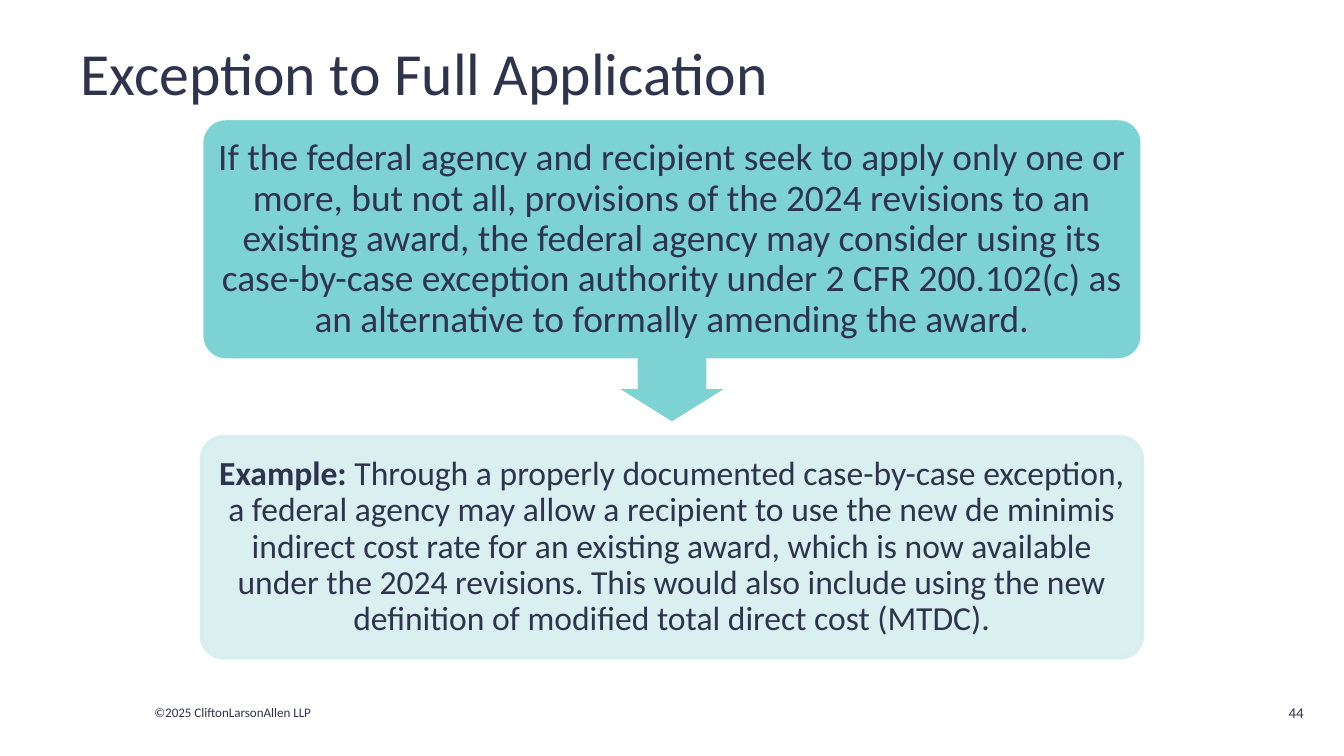
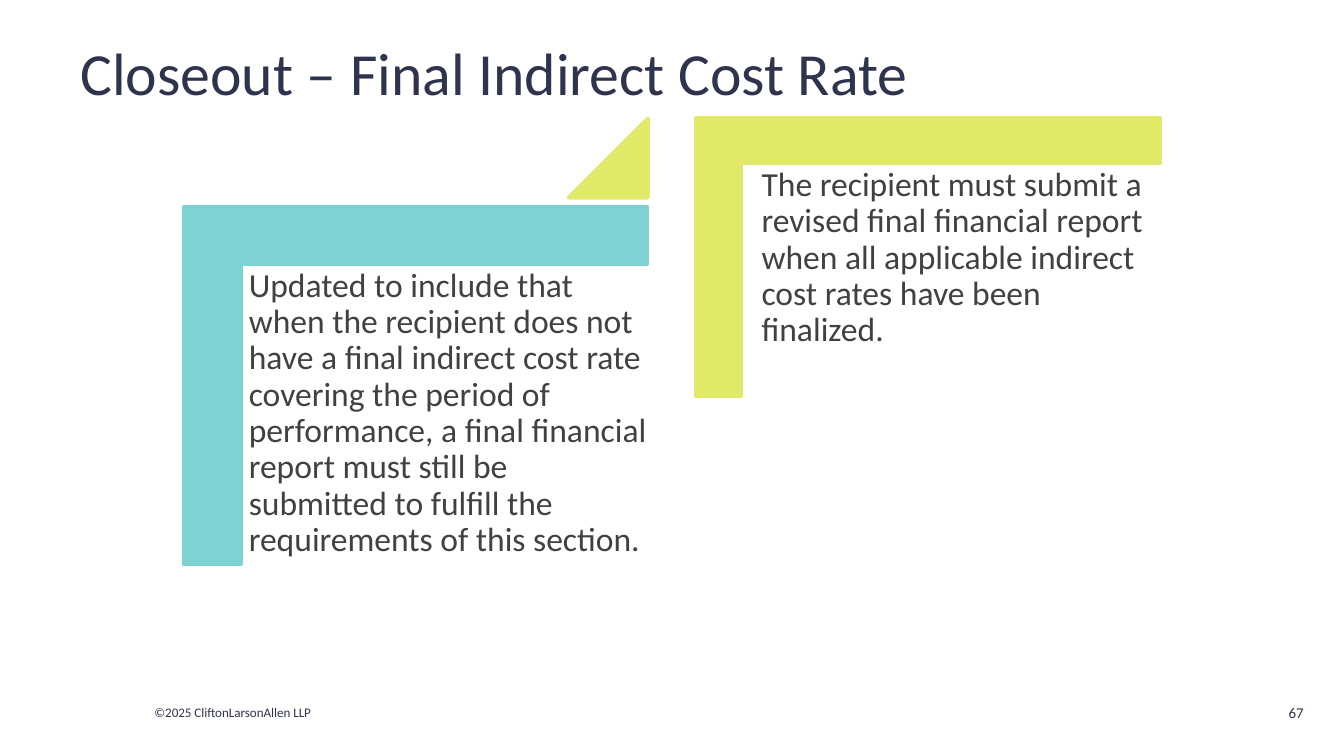
from lxml.etree import SubElement
from pptx import Presentation
from pptx.dml.color import RGBColor
from pptx.enum.shapes import MSO_SHAPE
from pptx.enum.text import MSO_ANCHOR, PP_ALIGN
from pptx.oxml.ns import qn
from pptx.util import Pt

HUES = {
    "navy": "2E334E",
    "gray": "414142",
    "teal": "7DD2D3",
    "pale": "D7EEEF",
    "lime": "E2E868",
    "white": "FFFFFF",
}
FONT = "Calibri"


def hue(name):
    """Return the named colour."""
    return RGBColor.from_string(HUES[name])


def fade(fill, alpha):
    """Make a solid fill partly see-through."""
    for tint in fill.iter(qn("a:srgbClr")):
        SubElement(tint, qn("a:alpha"), val=str(alpha * 1000))


def text(slide, box, words, size, color="navy", lead="", align=PP_ALIGN.LEFT,
         anchor=MSO_ANCHOR.MIDDLE, inset=None, body=False):
    """Add one paragraph of text, with an optional bold lead."""
    frame = slide.shapes.add_textbox(*map(Pt, box)).text_frame
    frame.word_wrap = True
    frame.vertical_anchor = anchor
    if inset is not None:
        frame.margin_left = frame.margin_right = Pt(inset)
        frame.margin_top = frame.margin_bottom = Pt(inset)
    para = frame.paragraphs[0]
    para.alignment = align
    if body:
        para.line_spacing = 0.9
        para.space_after = Pt(round(0.35 * size, 1))
    for part, bold in ((lead, True), (words, False)):
        if part:
            run = para.add_run()
            run.text = part
            run.font.name = FONT
            run.font.size = Pt(size)
            run.font.bold = bold
            run.font.color.rgb = hue(color)


def shape(slide, kind, box, fill, line=None, turn=0, adjust=(), alpha=None):
    """Add a filled preset shape."""
    item = slide.shapes.add_shape(kind, *map(Pt, box))
    item.shadow.inherit = False
    item.rotation = turn
    for spot, value in enumerate(adjust):
        item.adjustments[spot] = value
    item.fill.solid()
    item.fill.fore_color.rgb = hue(fill)
    if line:
        item.line.color.rgb = hue(line)
        item.line.width = Pt(2)
    else:
        item.line.fill.background()
    if alpha:
        fade(item.element.spPr, alpha)


def base(deck, title, page):
    """Add a slide with its title, footer and page number."""
    slide = deck.slides.add_slide(deck.slide_layouts[6])
    text(slide, (75.6, 373.7, 108.7, 15.8), "©2025 CliftonLarsonAllen LLP", 7)
    text(slide, (36, 11.5, 648, 54), title, 32)
    text(slide, (674.6, 367.9, 31, 27.4), str(page), 8, align=PP_ALIGN.RIGHT)
    return slide


def card(slide, top, high, words, size, fill, line, lead="", alpha=None):
    """Add a rounded card with centred text."""
    shape(slide, MSO_SHAPE.ROUNDED_RECTANGLE, (108, top, 504, high), fill,
          line, adjust=[0.1], alpha=alpha)
    text(slide, (111.6, top + 3.6, 496.8, high - 7.2), words, size, lead=lead,
         align=PP_ALIGN.CENTER, inset=2.2, body=True)


def step(slide, left, top, high, fill, words):
    """Add a corner bracket with the text that it frames."""
    wide = 248.4
    shift = (wide - high) / 2
    shape(slide, MSO_SHAPE.CORNER, (left + shift, top - shift, high, wide),
          fill, fill, turn=90, adjust=[0.161, 0.161])
    inner = (left + 30, top + 0.16 * high - 2.5, 223.9, 196.6)
    text(slide, inner, words, 18, "gray", anchor=MSO_ANCHOR.TOP, inset=5,
         body=True)


def main():
    """Build and save both slides."""
    deck = Presentation()
    deck.slide_width, deck.slide_height = Pt(720), Pt(405)

    slide = base(deck, "Exception to Full Application", 44)
    card(slide, 63.4, 129.6,
         "If the federal agency and recipient seek to apply only one or more, "
         "but not all, provisions of the 2024 revisions to an existing award, "
         "the federal agency may consider using its case-by-case exception "
         "authority under 2 CFR 200.102(c) as an alternative to formally "
         "amending the award.", 20, "teal", "white")
    shape(slide, MSO_SHAPE.RIGHT_ARROW, (342.7, 180.7, 34.6, 55.4), "teal",
          turn=90, adjust=[0.667, 0.5])
    card(slide, 234, 118.4,
         "Through a properly documented case-by-case exception, a federal "
         "agency may allow a recipient to use the new de minimis indirect "
         "cost rate for an existing award, which is now available under the "
         "2024 revisions. This would also include using the new definition "
         "of modified total direct cost (MTDC).", 18, "pale", "pale",
         lead="Example: ", alpha=90)

    slide = base(deck, "Closeout – Final Indirect Cost Rate", 67)
    step(slide, 98.3, 110.6, 191.5, "teal",
         "Updated to include that when the recipient does not have a final "
         "indirect cost rate covering the period of performance, a final "
         "financial report must still be submitted to fulfill the "
         "requirements of this section.")
    shape(slide, MSO_SHAPE.ISOSCELES_TRIANGLE, (304.6, 63.4, 42.5, 42.5),
          "lime", "lime", adjust=[1])
    step(slide, 373, 63.4, 149, "lime",
         "The recipient must submit a revised final financial report when "
         "all applicable indirect cost rates have been finalized.")
    deck.save("out.pptx")


if __name__ == "__main__":
    main()
